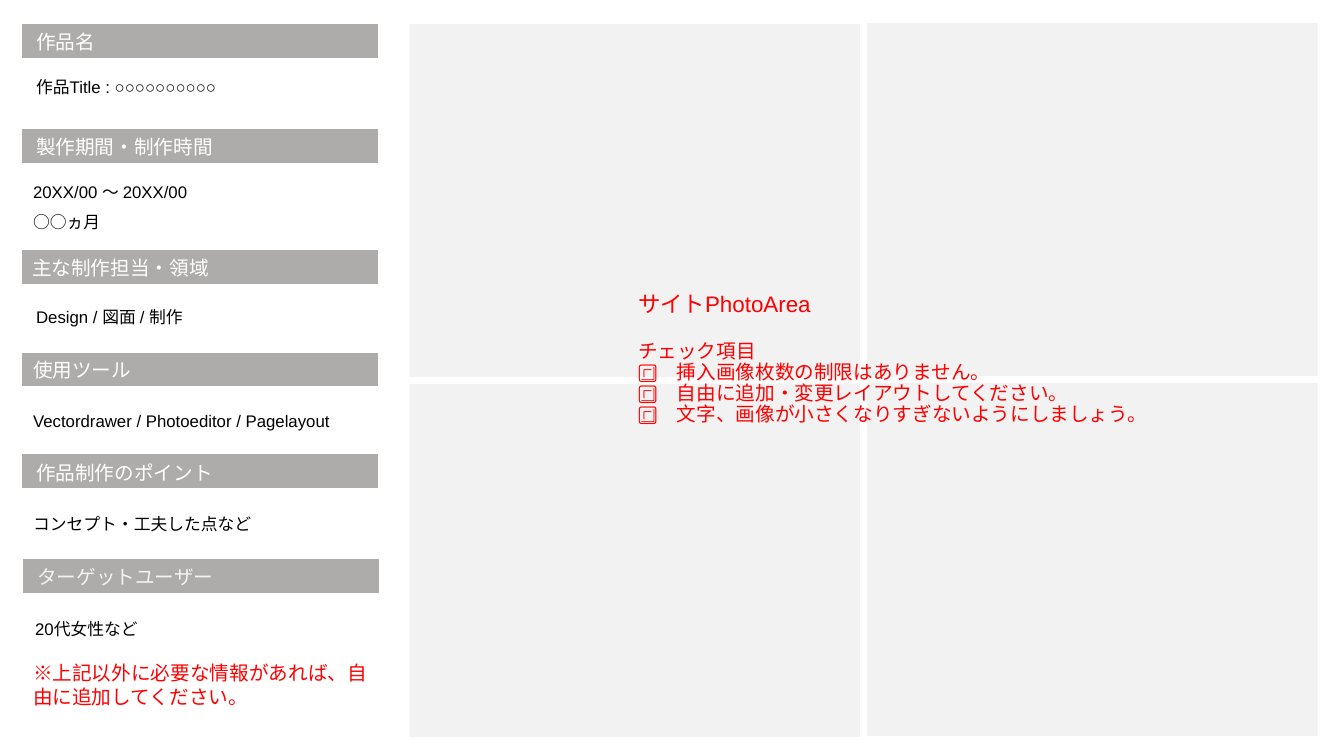
import dataclasses

import pptx
import pptx.dml.color
import pptx.enum.shapes
import pptx.enum.text
import pptx.util

EMU_PER_PX = 9144
SLIDE_WIDTH, SLIDE_HEIGHT = 1333, 750
FONT = "Arial"
COLORS = {
    "panel": "F2F2F2",
    "bar": "AEABAB",
    "white": "FFFFFF",
    "pale": "F3F3F3",
    "black": "000000",
    "red": "FF0000",
}
MIDDLE = pptx.enum.text.MSO_ANCHOR.MIDDLE
TOP = pptx.enum.text.MSO_ANCHOR.TOP


@dataclasses.dataclass
class Section:
    heading: str
    bar: tuple
    heading_at: tuple
    lines: list
    body_at: tuple
    centred: bool = False
    color: str = "white"
    line_spacing: float = 0.9


SECTIONS = [
    Section("作品名", (21, 23), (26, 27), ["作品Title : ○○○○○○○○○○"], (26, 73), centred=True),
    Section("製作期間・制作時間", (21, 127), (26, 131), ["20XX/00 ～ 20XX/00", "○○ヵ月"],
            (23, 179), centred=True, line_spacing=0.8),
    Section("主な制作担当・領域", (21, 247), (22, 251), ["Design / 図面 / 制作"], (26, 302), centred=True),
    Section("使用ツール", (21, 349), (23, 350), ["Vectordrawer / Photoeditor / Pagelayout"], (23, 405)),
    Section("作品制作のポイント", (21, 450), (26, 452), ["コンセプト・工夫した点など"], (23, 507)),
    Section("ターゲットユーザー", (22, 554), (27, 556), ["20代女性など"], (25, 611), color="pale"),
]
CHECKS = [
    "挿入画像枚数の制限はありません。",
    "自由に追加・変更レイアウトしてください。",
    "文字、画像が小さくなりすぎないようにしましょう。",
]


def px(length):
    return pptx.util.Emu(length * EMU_PER_PX)


def rgb(color):
    return pptx.dml.color.RGBColor.from_string(COLORS[color])


def add_rectangle(slide, left, top, width, height, fill, line=None):
    shape = slide.shapes.add_shape(
        pptx.enum.shapes.MSO_SHAPE.RECTANGLE, px(left), px(top), px(width), px(height))
    shape.shadow.inherit = False
    shape.fill.solid()
    shape.fill.fore_color.rgb = rgb(fill)
    if line:
        shape.line.color.rgb = rgb(line)
        shape.line.width = pptx.util.Pt(1)
    else:
        shape.line.fill.background()


def add_text(slide, left, top, width, height, lines, size, color, line_spacing=1.0, anchor=TOP):
    text_frame = slide.shapes.add_textbox(px(left), px(top), px(width), px(height)).text_frame
    text_frame.word_wrap = True
    text_frame.vertical_anchor = anchor
    text_frame.text = "\n".join(lines)
    for paragraph in text_frame.paragraphs:
        paragraph.line_spacing = line_spacing
        for run in paragraph.runs:
            run.font.name = FONT
            run.font.size = pptx.util.Pt(size)
            run.font.color.rgb = rgb(color)
    return text_frame


def add_photo_panels(slide):
    for left, top in ((406, 24), (860, 23)):
        for row in range(2):
            add_rectangle(slide, left, top + row * 357, 447, 350, "panel")


def add_section(slide, section):
    add_rectangle(slide, *section.bar, 355, 35, "bar", "white")
    if section.centred:
        add_text(slide, *section.heading_at, 343, 32, [section.heading], 14,
                 section.color, 0.9, MIDDLE)
    else:
        add_text(slide, *section.heading_at, 343, 34, [section.heading], 14, section.color)
    body = add_text(slide, *section.body_at, 364, 34 if len(section.lines) == 1 else 56,
                    section.lines, 12, "black", section.line_spacing)
    for paragraph in body.paragraphs[1:]:
        paragraph.space_before = pptx.util.Pt(10)


def add_checklist(slide):
    lines = ["サイトPhotoArea", "チェック項目"] + [f"🔳\u3000{check}" for check in CHECKS]
    lines = [line.replace("\u3000", "　") for line in lines]
    title = add_text(slide, 623, 286, 558, 180, lines, 14, "red", 0.9).paragraphs[0]
    title.space_after = pptx.util.Pt(17)
    title.runs[0].font.size = pptx.util.Pt(16)


def main():
    presentation = pptx.Presentation()
    presentation.slide_width = px(SLIDE_WIDTH)
    presentation.slide_height = px(SLIDE_HEIGHT)
    slide = presentation.slides.add_slide(presentation.slide_layouts[6])
    add_photo_panels(slide)
    for section in SECTIONS:
        add_section(slide, section)
    add_text(slide, 23, 651, 355, 56,
             ["※上記以外に必要な情報があれば、自由に追加してください。"], 14, "red")
    add_checklist(slide)
    presentation.save("out.pptx")


if __name__ == "__main__":
    main()
